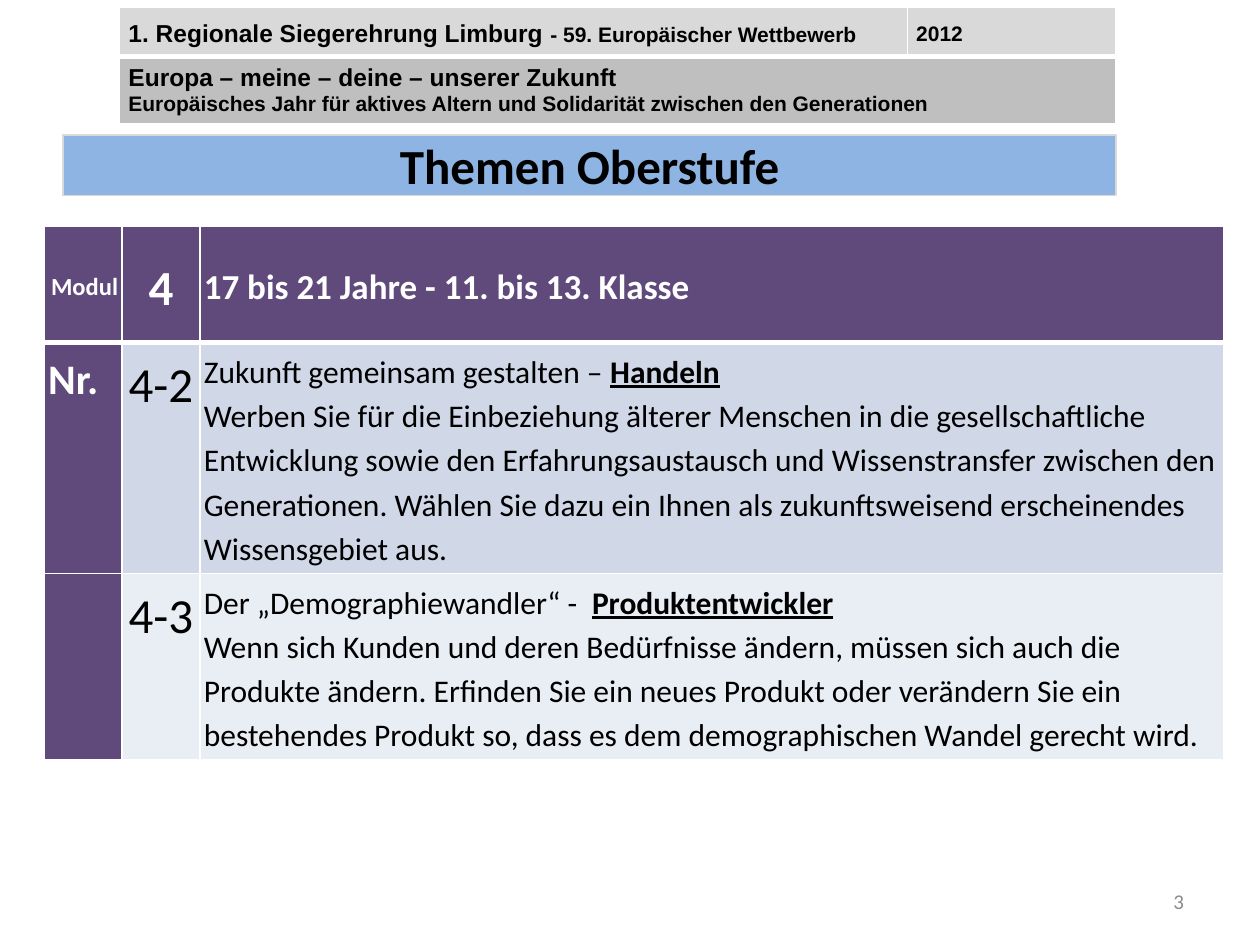
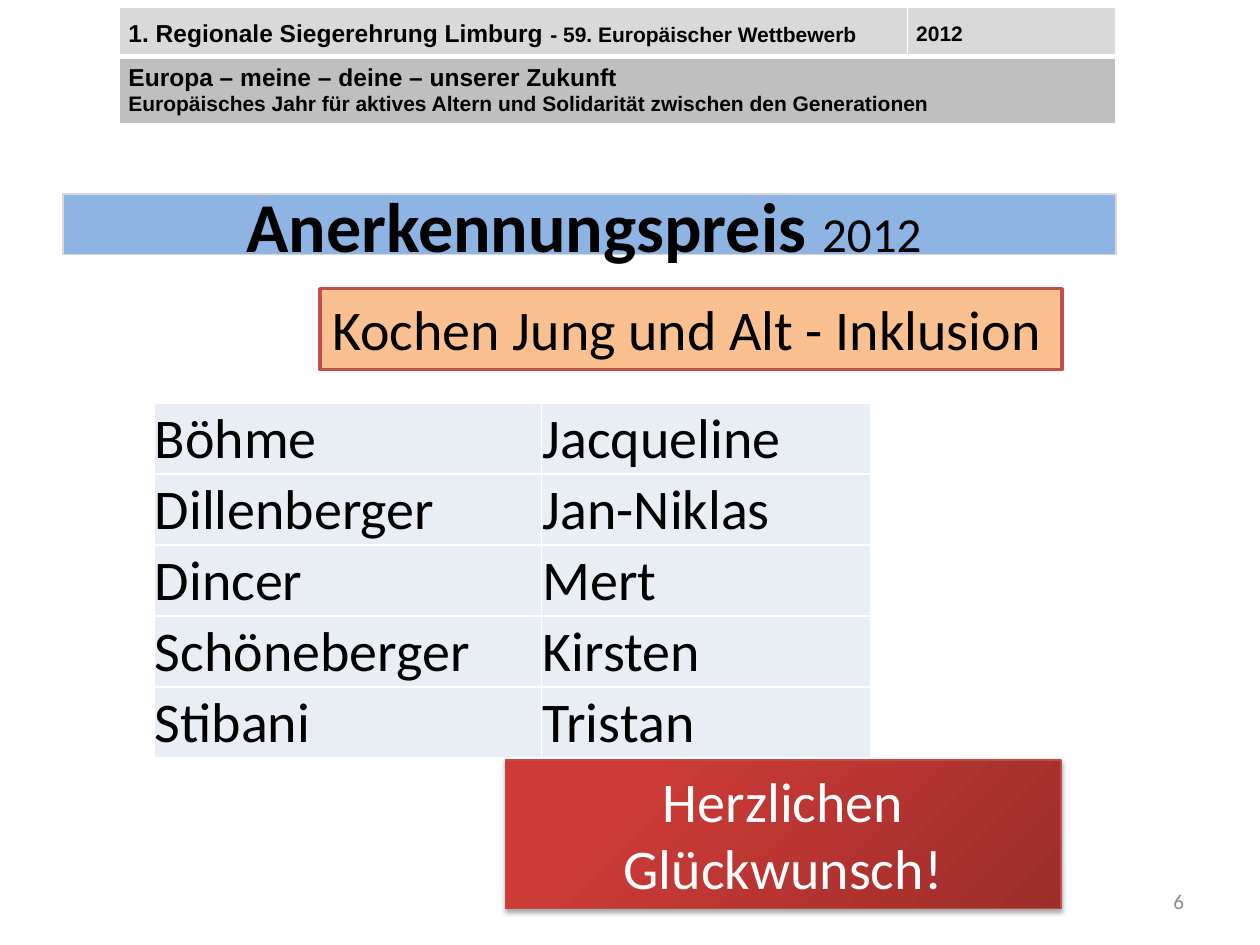
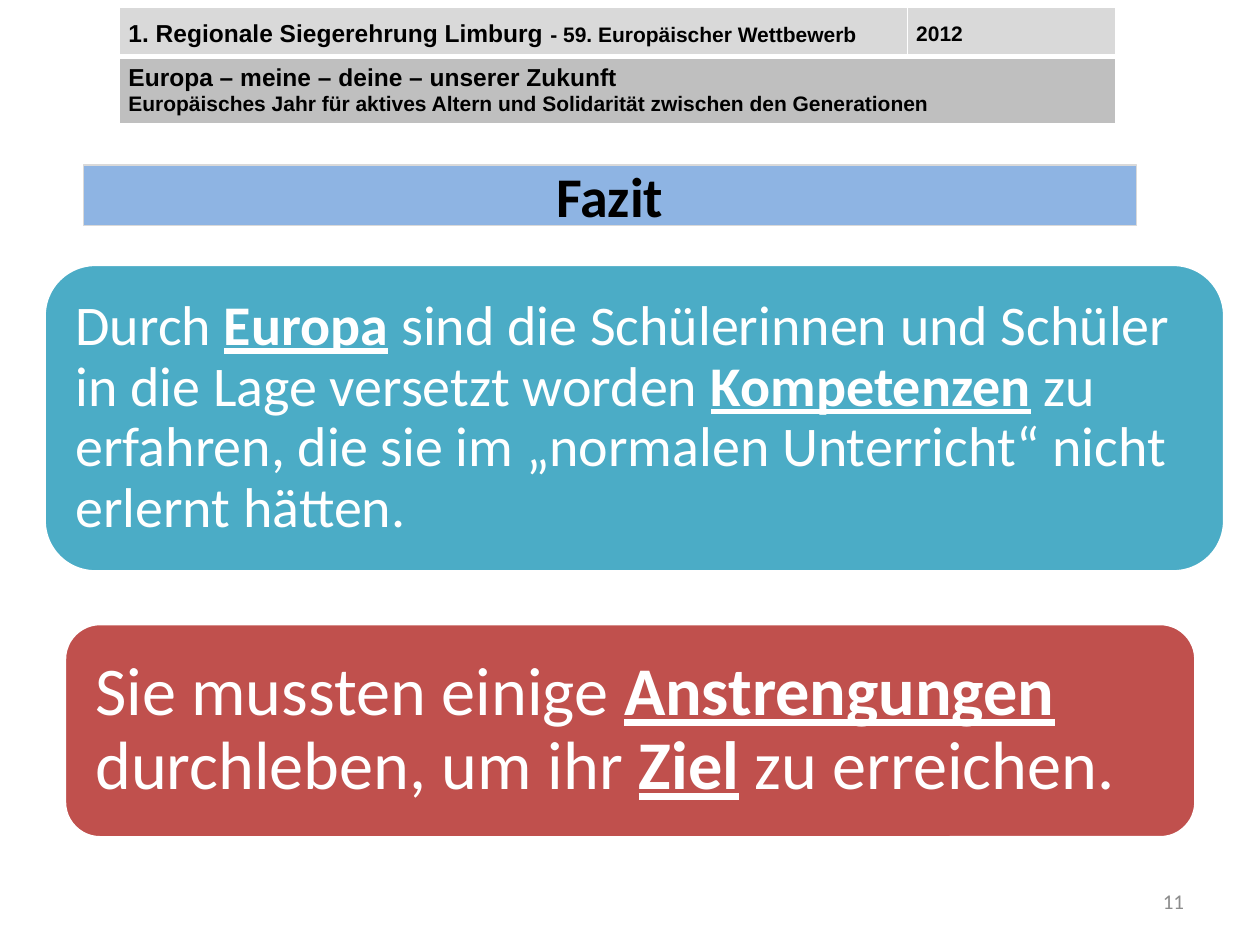
from pptx import Presentation
from pptx.dml.color import RGBColor
from pptx.enum.shapes import MSO_SHAPE
from pptx.enum.text import MSO_ANCHOR, PP_ALIGN
from pptx.oxml.ns import qn
from pptx.util import Cm, Pt
from lxml.etree import SubElement

BLACK, WHITE = "000000", "FFFFFF"
LIGHT, SILVER, GREY = "D9D9D9", "BFBFBF", "8C8C8C"
BLUE, PURPLE, TEAL, RED = "8EB4E3", "604A7B", "4BACC6", "C0504D"
PALE, MIST, PEACH = "E9EDF4", "D0D8E8", "FAC090"
LEFT, MID, RIGHT = PP_ALIGN.LEFT, PP_ALIGN.CENTER, PP_ALIGN.RIGHT
TOP, CENTER, BOTTOM = MSO_ANCHOR.TOP, MSO_ANCHOR.MIDDLE, MSO_ANCHOR.BOTTOM
MARK = {"bold": True, "underline": True}


def rgb(code):
    return RGBColor.from_string(code)


def write(par, parts, size, color=BLACK, name="Calibri", bold=False,
          align=LEFT, line=1.0, after=0):
    """Fill a paragraph with a string or a list of (text, font changes)."""
    par.alignment, par.line_spacing, par.space_after = align, line, Pt(after)
    font = par.font
    font.name, font.size, font.bold = name, Pt(size), bold
    font.color.rgb = rgb(color)
    for text, style in [(parts, {})] if isinstance(parts, str) else parts:
        for num, piece in enumerate(text.split("\n")):
            if num:
                par.add_line_break()
            if piece:
                run = par.add_run()
                run.text = piece
                for key, value in style.items():
                    setattr(run.font, key, value)


def block(slide, kind, box, fill, edge, width, pad=None, anchor=CENTER):
    """Add a preset shape; return it ready for text."""
    shape = slide.shapes.add_shape(kind, *map(Cm, box))
    shape.shadow.inherit = False
    if fill:
        shape.fill.solid()
        shape.fill.fore_color.rgb = rgb(fill)
    shape.line.color.rgb = rgb(edge)
    shape.line.width = Pt(width)
    frame = shape.text_frame
    frame.word_wrap, frame.vertical_anchor = True, anchor
    if pad is not None:
        frame.margin_left = frame.margin_right = Cm(pad)
        frame.margin_top = frame.margin_bottom = Cm(pad)
    return shape


def grid(slide, left, top, cols, rows):
    frame = slide.shapes.add_table(len(rows), len(cols), Cm(left), Cm(top),
                                   Cm(sum(cols)), Cm(sum(rows)))
    table = frame.table
    table.first_row = table.horz_banding = False
    for col, width in zip(table.columns, cols):
        col.width = Cm(width)
    for row, height in zip(table.rows, rows):
        row.height = Cm(height)
    return table


def paint(cell, fill, side, ends, anchor=CENTER, upper=1, lower=1):
    """Set borders, fill, margins and anchor of a table cell."""
    props = cell._tc.get_or_add_tcPr()
    for tag, width in zip("LRTB", (1, 1, upper, lower)):
        edge = SubElement(props, qn("a:ln" + tag), w=str(Pt(width)))
        paper = SubElement(edge, qn("a:solidFill"))
        SubElement(paper, qn("a:srgbClr"), val=WHITE)
    cell.fill.solid()
    cell.fill.fore_color.rgb = rgb(fill)
    cell.margin_left = cell.margin_right = Cm(side)
    cell.margin_top = cell.margin_bottom = Cm(ends)
    cell.vertical_anchor = anchor
    return cell.text_frame


# Parts that every slide has
def header(slide, left=2.41, top=0.15):
    table = grid(slide, left, top, (15.88, 4.2), (0.99, 1.35))
    table.cell(1, 0).merge(table.cell(1, 1))
    event, year = [paint(table.cell(0, col), LIGHT, 0.18, 0, lower=3)
                   for col in (0, 1)]
    motto, _ = [paint(table.cell(1, col), SILVER, 0.18, 0, upper=3)
                for col in (0, 1)]
    look = {"name": "Arial", "bold": True}
    write(event.paragraphs[0],
          [("1. Regionale Siegerehrung Limburg ", {"size": Pt(14)}),
           ("- 59. Europäischer Wettbewerb", {})], 12, line=1.15, **look)
    write(year.paragraphs[0], "2012", 12, line=1.15, **look)
    write(motto.paragraphs[0], "Europa – meine – deine – unserer Zukunft",
          14, **look)
    write(motto.add_paragraph(), "Europäisches Jahr für aktives Altern und "
          "Solidarität zwischen den Generationen", 12, **look)


def title(slide, left, top, parts, size):
    bar = block(slide, MSO_SHAPE.RECTANGLE, (left, top, 21.23, 1.22),
                BLUE, LIGHT, 0.75)
    write(bar.text_frame.paragraphs[0], parts, size, bold=True, align=MID)


def footer(slide, number):
    box = slide.shapes.add_textbox(Cm(18.2), Cm(17.65), Cm(5.92), Cm(1.02))
    frame = box.text_frame
    frame.word_wrap, frame.vertical_anchor = True, CENTER
    write(frame.paragraphs[0], str(number), 12, GREY, align=RIGHT)


def start(deck, number):
    slide = deck.slides.add_slide(deck.slide_layouts[6])
    header(slide)
    footer(slide, number)
    return slide


# Topics of the upper school
def topics(slide, left, top):
    table = grid(slide, left, top, (1.57, 1.57, 20.65), (2.34, 4.65, 3.76))
    heads = [("Modul", 14, RIGHT), ("4", 28, MID),
             ("17 bis 21 Jahre - 11. bis 13. Klasse", 20, LEFT)]
    for col, (text, size, align) in enumerate(heads):
        frame = paint(table.cell(0, col), PURPLE, 0.08, 0.08, lower=3)
        write(frame.paragraphs[0], text, size, WHITE, bold=True,
              align=align, line=1.15, after=10)
    tasks = [
        ("Nr.", "4-2", MIST, 3, 0, [
            ("Zukunft gemeinsam gestalten – ", {}), ("Handeln", MARK),
            ("\nWerben Sie für die Einbeziehung älterer Menschen in die "
             "gesellschaftliche Entwicklung sowie den Erfahrungsaustausch "
             "und Wissenstransfer zwischen den Generationen. Wählen Sie dazu "
             "ein Ihnen als zukunftsweisend erscheinendes Wissensgebiet aus.",
             {})]),
        ("", "4-3", PALE, 1, 10, [
            ("Der „Demographiewandler“ -  ", {}), ("Produktentwickler", MARK),
            ("\nWenn sich Kunden und deren Bedürfnisse ändern, müssen sich "
             "auch die Produkte ändern. Erfinden Sie ein neues Produkt oder "
             "verändern Sie ein bestehendes Produkt so, dass es dem "
             "demographischen Wandel gerecht wird.", {})]),
    ]
    for row, (label, code, fill, upper, after, parts) in enumerate(tasks, 1):
        cells = [(label, 24, WHITE, True, LEFT, PURPLE, TOP),
                 (code, 28, BLACK, False, MID, fill, TOP),
                 (parts, 18, BLACK, False, LEFT, fill, CENTER)]
        for col, (text, size, ink, bold, align, back, anchor) in enumerate(cells):
            frame = paint(table.cell(row, col), back, 0.08, 0.08, anchor, upper)
            write(frame.paragraphs[0], text, size, ink, bold=bold,
                  align=align, line=1.15, after=after)


# Prize winners
def winners(slide, left, top):
    names = [("Böhme", "Jacqueline"), ("Dillenberger", "Jan-Niklas"),
             ("Dincer", "Mert"), ("Schöneberger", "Kirsten"),
             ("Stibani", "Tristan")]
    table = grid(slide, left, top, (7.82, 6.63), [1.43] * len(names))
    for row, pair in enumerate(names):
        for col, text in enumerate(pair):
            frame = paint(table.cell(row, col), PALE, 0.02, 0.01, BOTTOM)
            write(frame.paragraphs[0], text, 32)


def label(slide, box, text):
    shape = block(slide, MSO_SHAPE.RECTANGLE, box, PEACH, RED, 2, anchor=TOP)
    write(shape.text_frame.paragraphs[0], text, 32)


def cheer(slide, box, text):
    shape = block(slide, MSO_SHAPE.RECTANGLE, box, None, "BF4C48", 0.75,
                  anchor=TOP)
    shape.fill.gradient()
    shape.fill.gradient_angle = 315
    stops = zip(shape.fill.gradient_stops, ("CE3B37", "9B2D2A"), (0.2, 1))
    for stop, color, place in stops:
        stop.color.rgb, stop.position = rgb(color), place
    # Soft shadow below
    effects = shape._element.spPr.find(qn("a:effectLst"))
    shade = SubElement(effects, qn("a:outerShdw"), blurRad=str(Pt(3.1)),
                       dist=str(Pt(1.8)), dir="5400000", rotWithShape="0")
    tint = SubElement(shade, qn("a:srgbClr"), val=BLACK)
    SubElement(tint, qn("a:alpha"), val="35000")
    write(shape.text_frame.paragraphs[0], text, 32, WHITE, align=MID)


# Conclusion
def claim(slide, box, fill, pad, size, parts):
    shape = block(slide, MSO_SHAPE.ROUNDED_RECTANGLE, box, fill, WHITE, 2, pad)
    write(shape.text_frame.paragraphs[0], parts, size, WHITE, line=0.9)


def main():
    deck = Presentation()
    deck.slide_width, deck.slide_height = Cm(25.4), Cm(19.05)

    slide = start(deck, 3)
    topics(slide, 0.89, 4.57)
    title(slide, 1.27, 2.72, "Themen Oberstufe", 28)

    slide = start(deck, 6)
    title(slide, 1.27, 3.91, [
        ("Anerkennungspreis ", {}),
        ("2012 ", {"size": Pt(28), "bold": False})], 40)
    label(slide, (6.45, 5.82, 14.96, 1.63), "Kochen Jung und Alt - Inklusion")
    winners(slide, 3.1, 8.13)
    cheer(slide, (10.19, 15.32, 11.2, 3), "Herzlichen Glückwunsch!")

    slide = start(deck, 11)
    title(slide, 1.68, 3.33, "Fazit", 32)
    claim(slide, (0.89, 5.33, 23.8, 6.2), TEAL, 0.33, 32, [
        ("Durch ", {}), ("Europa", MARK),
        (" sind die Schülerinnen und Schüler in die Lage versetzt worden ", {}),
        ("Kompetenzen", MARK),
        (" zu erfahren, die sie im „normalen Unterricht“ nicht erlernt hätten.",
         {})])
    claim(slide, (1.3, 12.57, 22.81, 4.32), RED, 0.41, 39, [
        ("Sie mussten einige ", {}), ("Anstrengungen", MARK),
        (" durchleben, um ihr ", {}), ("Ziel", MARK),
        (" zu erreichen.", {})])

    deck.save("out.pptx")


if __name__ == "__main__":
    main()
